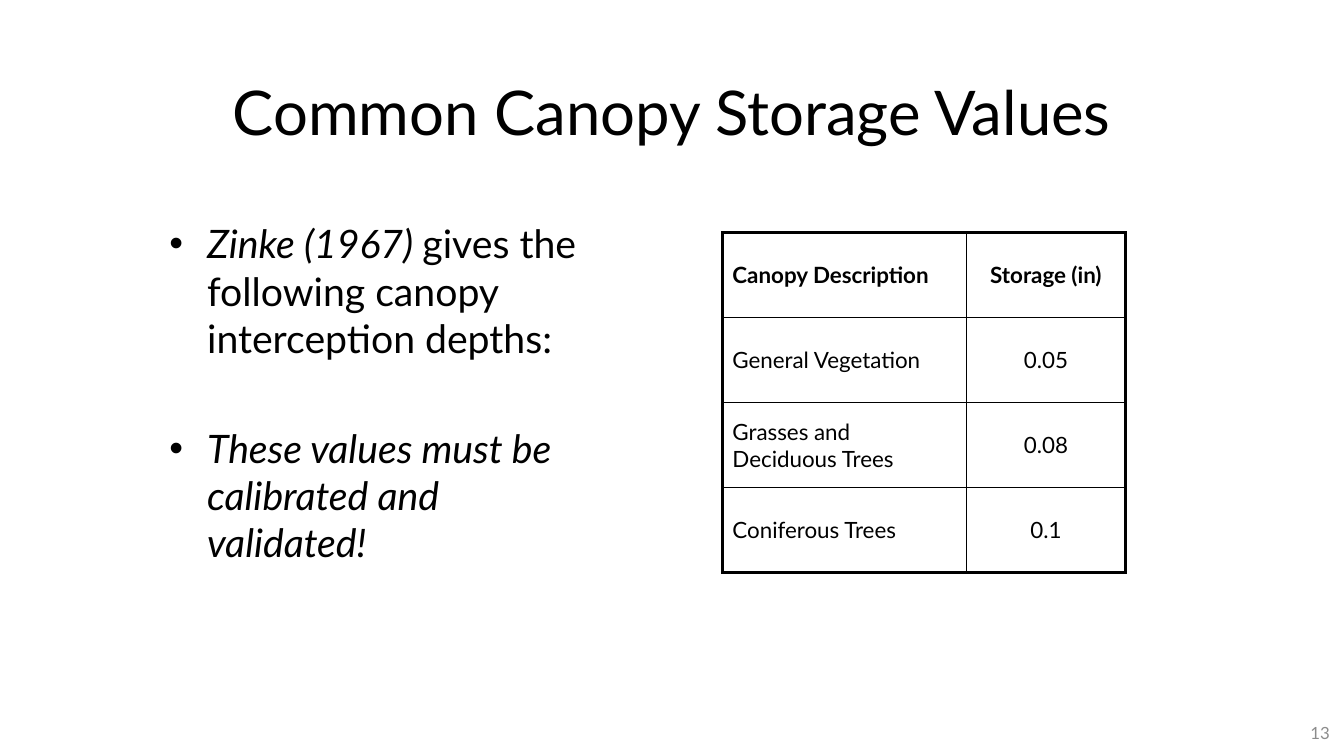
from dataclasses import dataclass

from lxml import etree
from pptx import Presentation
from pptx.dml.color import RGBColor
from pptx.enum.text import MSO_ANCHOR, MSO_AUTO_SIZE, PP_ALIGN
from pptx.oxml.ns import qn
from pptx.slide import Slide
from pptx.util import Inches, Pt

LEFT, CENTER, RIGHT = PP_ALIGN.LEFT, PP_ALIGN.CENTER, PP_ALIGN.RIGHT
TOP, MIDDLE = MSO_ANCHOR.TOP, MSO_ANCHOR.MIDDLE
NO_AUTOFIT = MSO_AUTO_SIZE.NONE

WIDTH, HEIGHT = Inches(13.33), Inches(7.5)
COLORS = {"ink": "000000", "page_number": "8C8C8C"}
THICK, THIN = 2.25, 1

STORAGE_VALUES = [
    ("Canopy Description", "Storage (in)"),
    ("General Vegetation", "0.05"),
    ("Grasses and Deciduous Trees", "0.08"),
    ("Coniferous Trees", "0.1"),
]
COLUMN_SHARES = (60.5, 39.5)
COLUMN_ALIGNS = (LEFT, CENTER)

STATEMENTS = [
    [("Zinke (1967) ", True), ("gives the following canopy interception depths:", False)],
    [("These values must be calibrated and validated!", True)],
]


def apply_format(target, values):
    for attribute, value in values.items():
        setattr(target, attribute, value)


def area(left, top, width, height):
    """Turn percentages of the slide's size into lengths."""
    shares = {"left": (left, WIDTH), "top": (top, HEIGHT),
              "width": (width, WIDTH), "height": (height, HEIGHT)}
    return {side: round(share * full / 100) for side, (share, full) in shares.items()}


@dataclass
class SlideBuilder:
    slide: Slide
    font_name: str = "Lato"

    def run(self, paragraph, text, size, color="ink", **font_values):
        run = paragraph.add_run()
        run.text = text
        apply_format(run.font, {"name": self.font_name, "size": Pt(size), **font_values})
        run.font.color.rgb = RGBColor.from_string(COLORS[color])

    def frame(self, shape, anchor):
        apply_format(shape.text_frame, {"word_wrap": True, "auto_size": NO_AUTOFIT,
                                        "vertical_anchor": anchor})
        return shape.text_frame

    def title(self, text, box):
        heading = self.slide.shapes.title
        apply_format(heading, box)
        paragraph = self.frame(heading, MIDDLE).paragraphs[0]
        paragraph.alignment = CENTER
        self.run(paragraph, text, 44)

    def bullets(self, statements, box, gap):
        body = self.slide.placeholders[1]
        apply_format(body, box)
        text_frame = self.frame(body, TOP)
        for index, parts in enumerate(statements):
            paragraph = text_frame.add_paragraph() if index else text_frame.paragraphs[0]
            paragraph.space_before = Pt(gap if index else 0)
            for text, italic in parts:
                self.run(paragraph, text, 28, italic=italic)

    def page_number(self, text, box):
        paragraph = self.frame(self.slide.shapes.add_textbox(**box), MIDDLE).paragraphs[0]
        paragraph.alignment = RIGHT
        self.run(paragraph, text, 12, "page_number")

    def borders(self, cell, widths):
        """Draw the cell's edges, given in points by side letter."""
        properties = cell._tc.get_or_add_tcPr()
        for position, (side, points) in enumerate(widths.items()):
            line = etree.Element(qn(f"a:ln{side}"), w=str(Pt(points)))
            fill = etree.SubElement(line, qn("a:solidFill"))
            etree.SubElement(fill, qn("a:srgbClr"), val=COLORS["ink"])
            properties.insert(position, line)

    def table(self, rows, box):
        last_row, last_column = len(rows) - 1, len(COLUMN_SHARES) - 1
        table = self.slide.shapes.add_table(len(rows), len(COLUMN_SHARES), **box).table
        apply_format(table, {"first_row": False, "horz_banding": False})
        for column, share in zip(table.columns, COLUMN_SHARES):
            column.width = round(box["width"] * share / 100)
        for r, values in enumerate(rows):
            for c, value in enumerate(values):
                cell = table.cell(r, c)
                cell.vertical_anchor = MIDDLE
                cell.fill.background()
                outer_edges = {"L": c == 0, "R": c == last_column,
                               "T": r == 0, "B": r == last_row}
                self.borders(cell, {side: THICK if outer else THIN
                                    for side, outer in outer_edges.items()})
                paragraph = cell.text_frame.paragraphs[0]
                paragraph.alignment = COLUMN_ALIGNS[c]
                self.run(paragraph, value, 16, bold=r == 0)


def main():
    presentation = Presentation()
    apply_format(presentation, {"slide_width": WIDTH, "slide_height": HEIGHT})
    title_and_content = presentation.slide_layouts[1]
    builder = SlideBuilder(presentation.slides.add_slide(title_and_content))
    builder.bullets(STATEMENTS, area(11.85, 28.4, 33.15, 59.73), gap=45)
    builder.title("Common Canopy Storage Values", area(5, 8.4, 90, 12.53))
    builder.page_number("13", area(76.35, 94.27, 23.33, 5.33))
    builder.table(STORAGE_VALUES, area(53.75, 30.8, 30, 44.93))
    presentation.save("out.pptx")


if __name__ == "__main__":
    main()
